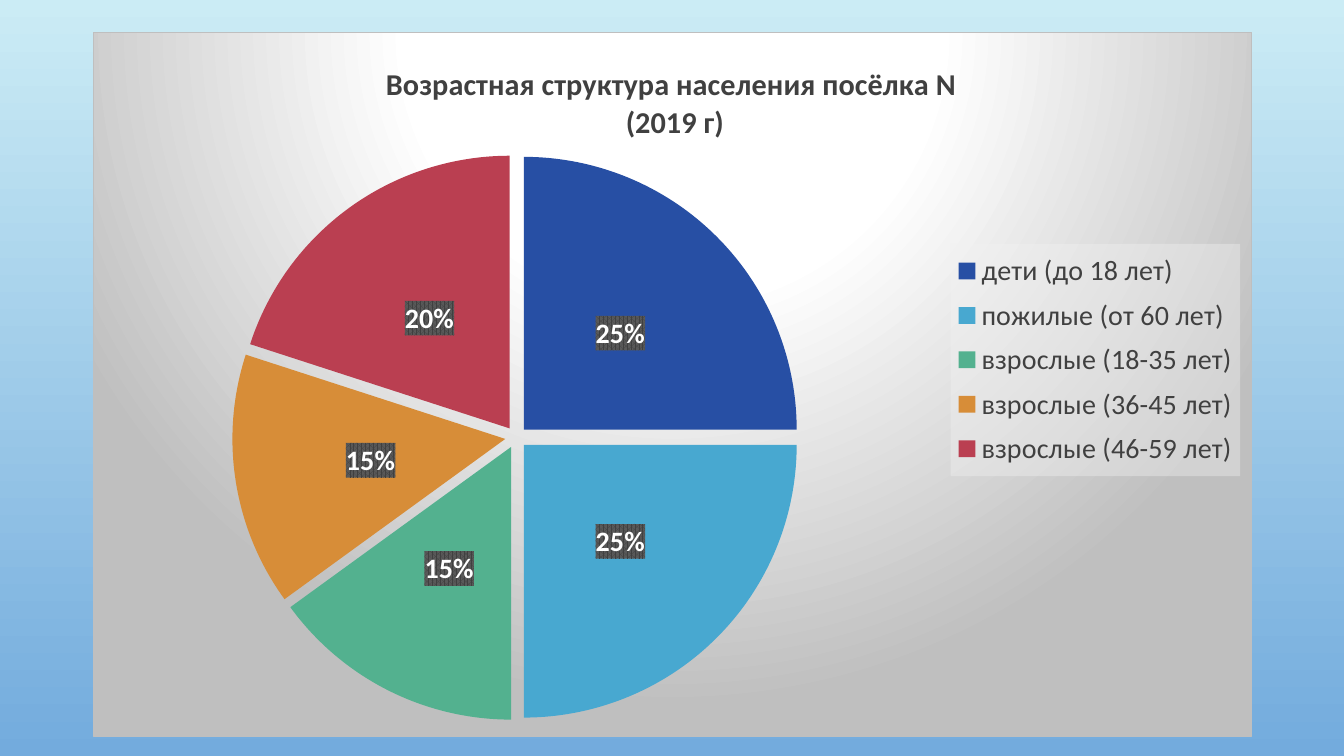
import pptx
import pptx.chart.data
import pptx.dml.color
import pptx.enum.chart
import pptx.oxml
import pptx.oxml.ns
import pptx.util

# Content
TITLE_LINES = ["Возрастная структура населения посёлка N ", "(2019 г)"]
AGE_GROUPS = [
    ("дети (до 18 лет)", 25, "274FA4"),
    ("пожилые (от 60 лет)", 25, "48A8D0"),
    ("взрослые (18-35 лет)", 15, "53B18F"),
    ("взрослые (36-45 лет)", 15, "D78D38"),
    ("взрослые (46-59 лет)", 20, "BA3F51"),
]

THEME = {
    "font": "Calibri",
    "text": "404040",
    "label": "FFFFFF",
    "sky": ("CBECF5", "73ABDD"),
    "title_size": 21.6,
    "text_size": 20,
    "base_size": 10,
}

# Slide size and chart frame in inches; inner parts as shares of the chart
SLIDE_SIZE = (13.33, 7.5)
CHART_FRAME = (0.92, 0.32, 11.5, 6.99)
TITLE_PLACE = {"x": 0.25, "y": 0.04}
PIE_PLACE = {"x": 0.12, "y": 0.17, "w": 0.49, "h": 0.81}
LEGEND_PLACE = {"x": 0.74, "y": 0.3, "w": 0.25, "h": 0.33}
EXPLOSION = 4

CHART_FILL = """<a:gradFill>
  <a:gsLst>
    <a:gs pos="0"><a:srgbClr val="FFFFFF"/></a:gs>
    <a:gs pos="39000"><a:srgbClr val="FFFFFF"/></a:gs>
    <a:gs pos="100000"><a:srgbClr val="BFBFBF"/></a:gs>
  </a:gsLst>
  <a:path path="circle"><a:fillToRect l="50000" t="-80000" r="50000" b="180000"/></a:path>
</a:gradFill>
<a:ln w="9525"><a:solidFill><a:srgbClr val="BFBFBF"/></a:solidFill></a:ln>"""
LEGEND_FILL = """<a:solidFill>
  <a:srgbClr val="F2F2F2"><a:alpha val="39000"/></a:srgbClr>
</a:solidFill>"""
LABEL_FILL = """<a:pattFill prst="pct75">
  <a:fgClr><a:srgbClr val="404040"/></a:fgClr>
  <a:bgClr><a:srgbClr val="595959"/></a:bgClr>
</a:pattFill>"""

qn = pptx.oxml.ns.qn
NAMESPACES = pptx.oxml.ns.nsdecls("c", "a")


def rgb(value):
    return pptx.dml.color.RGBColor.from_string(value)


def set_font(font, size, color, bold=False):
    font.name = THEME["font"]
    font.size = pptx.util.Pt(size)
    font.bold = bold
    font.color.rgb = rgb(color)


def set_background(element, fill):
    """Fill a chart part that already has its text properties."""
    properties = pptx.oxml.parse_xml(f"<c:spPr {NAMESPACES}>{fill}</c:spPr>")
    element.find(qn("c:txPr")).addprevious(properties)


def set_layout(element, place, inner=False):
    """Place a chart part by shares of the chart's size."""
    for old_layout in element.findall(qn("c:layout")):
        element.remove(old_layout)
    target = '<c:layoutTarget val="inner"/>' if inner else ""
    modes = "".join(f'<c:{key}Mode val="edge"/>' for key in "xy")
    values = "".join(f'<c:{key} val="{share}"/>' for key, share in place.items())
    layout = pptx.oxml.parse_xml(
        f"<c:layout {NAMESPACES}><c:manualLayout>{target}{modes}{values}"
        "</c:manualLayout></c:layout>"
    )
    overlay = element.find(qn("c:overlay"))
    if overlay is None:
        element.insert(0, layout)
    else:
        overlay.addprevious(layout)


def add_age_chart(slide):
    names, shares, colors = zip(*AGE_GROUPS)
    chart_data = pptx.chart.data.CategoryChartData()
    chart_data.categories = names
    chart_data.add_series("Series 1", shares)
    frame = [pptx.util.Inches(length) for length in CHART_FRAME]
    chart = slide.shapes.add_chart(
        pptx.enum.chart.XL_CHART_TYPE.PIE, *frame, chart_data
    ).chart
    set_font(chart.font, THEME["base_size"], "000000")
    set_background(chart.element, CHART_FILL)

    # Title
    title_frame = chart.chart_title.text_frame
    title_frame.text = "\n".join(TITLE_LINES)
    for paragraph in title_frame.paragraphs:
        set_font(paragraph.font, THEME["title_size"], THEME["text"], bold=True)
    set_layout(chart.element.find(".//" + qn("c:title")), TITLE_PLACE)

    # Slices
    plot = chart.plots[0]
    plot.vary_by_categories = True
    for index, color in enumerate(colors):
        fill = plot.series[0].points[index].format.fill
        fill.solid()
        fill.fore_color.rgb = rgb(color)
    explosion = pptx.oxml.parse_xml(f'<c:explosion {NAMESPACES} val="{EXPLOSION}"/>')
    chart.element.find(".//" + qn("c:dPt")).addprevious(explosion)
    set_layout(chart.element.find(".//" + qn("c:plotArea")), PIE_PLACE, inner=True)

    # Percentages
    plot.has_data_labels = True
    labels = plot.data_labels
    labels.show_percentage = True
    labels.show_value = False
    labels.number_format = "0%"
    labels.number_format_is_linked = False
    labels.position = pptx.enum.chart.XL_LABEL_POSITION.CENTER
    set_font(labels.font, THEME["text_size"], THEME["label"], bold=True)
    set_background(chart.element.find(".//" + qn("c:dLbls")), LABEL_FILL)

    # Legend
    chart.has_legend = True
    legend = chart.legend
    legend.position = pptx.enum.chart.XL_LEGEND_POSITION.RIGHT
    legend.include_in_layout = False
    set_font(legend.font, THEME["text_size"], THEME["text"])
    legend_element = chart.element.find(".//" + qn("c:legend"))
    set_background(legend_element, LEGEND_FILL)
    set_layout(legend_element, LEGEND_PLACE)


def main():
    presentation = pptx.Presentation()
    presentation.slide_width, presentation.slide_height = map(pptx.util.Inches, SLIDE_SIZE)
    slide = presentation.slides.add_slide(presentation.slide_layouts[6])

    # Sky gradient from top to bottom
    sky = slide.background.fill
    sky.gradient()
    sky.gradient_angle = 270
    for stop, color in zip(sky.gradient_stops, THEME["sky"]):
        stop.color.rgb = rgb(color)

    add_age_chart(slide)
    presentation.save("out.pptx")


if __name__ == "__main__":
    main()
